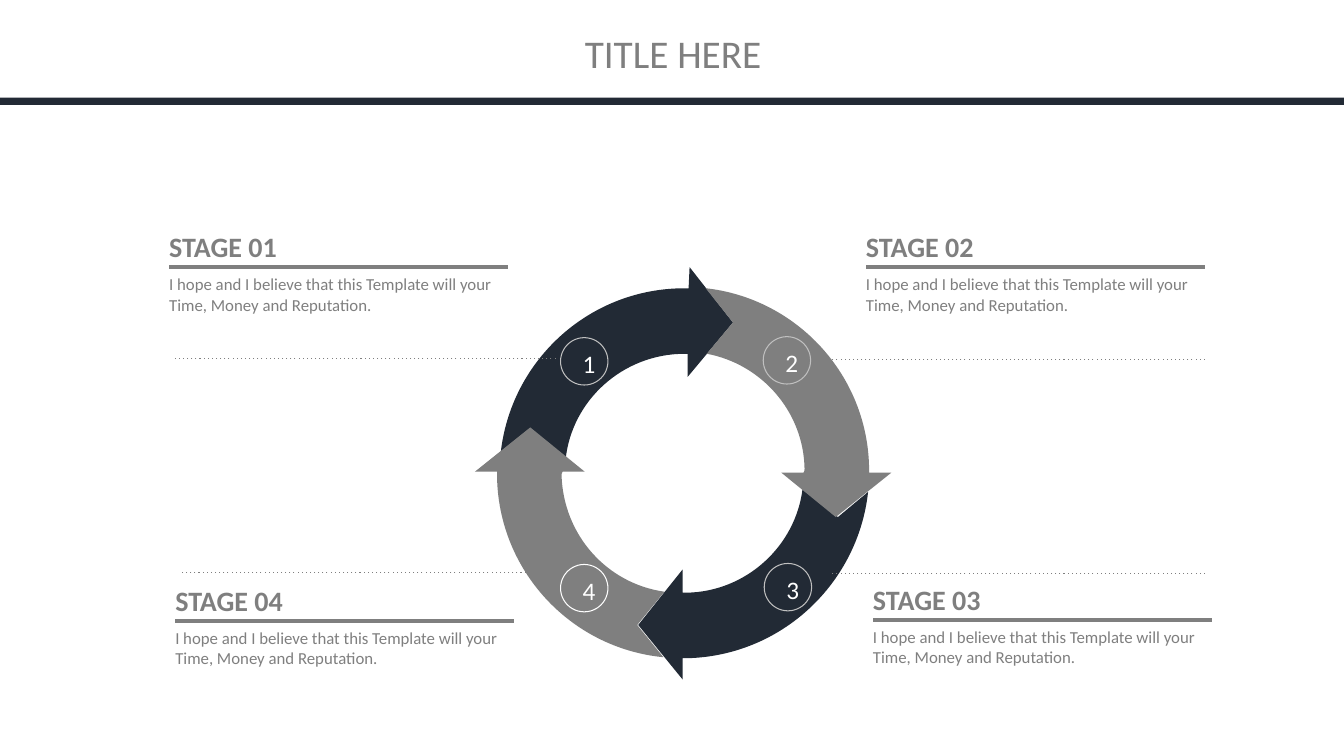
from lxml import etree
from pptx import Presentation
from pptx.dml.color import RGBColor
from pptx.enum import dml, shapes, text
from pptx.oxml.ns import qn
from pptx.util import Inches, Pt

NAVY, GRAY, SILVER, WHITE = "222A35", "7F7F7F", "C0C0C0", "FFFFFF"
BODY = "I hope and I believe that this Template will your Time, Money and Reputation."


def write(sp, words, size, color, bold=False, align=text.PP_ALIGN.LEFT):
    tf = sp.text_frame
    tf.word_wrap = True
    p = tf.paragraphs[0]
    p.alignment = align
    r = p.add_run()
    r.text = words
    r.font.name, r.font.size, r.font.bold = "Calibri", Pt(size), bold
    r.font.color.rgb = RGBColor.from_string(color)


def add_line(x1, x2, y, width):
    line = s.shapes.add_connector(shapes.MSO_CONNECTOR.STRAIGHT,
                                  Inches(x1), Inches(y), Inches(x2), Inches(y))
    line.line.color.rgb = RGBColor.from_string(GRAY)
    line.line.width = Pt(width)
    etree.SubElement(line._element.spPr, qn("a:effectLst"))
    return line


prs = Presentation()
prs.slide_width, prs.slide_height = Inches(13.33), Inches(7.5)
s = prs.slides.add_slide(prs.slide_layouts[5])

# Header
bar = s.shapes.add_shape(shapes.MSO_SHAPE.RECTANGLE, 0, Inches(0.97), prs.slide_width, Inches(0.07))
bar.shadow.inherit = False
bar.fill.solid()
bar.fill.fore_color.rgb = RGBColor.from_string(NAVY)
bar.line.fill.background()

title = s.shapes.title
title.left, title.top, title.width, title.height = Inches(4.85), Inches(0.29), Inches(3.65), Inches(0.47)
tf = title.text_frame
tf.margin_left = tf.margin_right = tf.margin_top = tf.margin_bottom = 0
tf.vertical_anchor = text.MSO_ANCHOR.MIDDLE
write(title, "TITLE HERE", 28, GRAY, align=text.PP_ALIGN.CENTER)

# Stage headings, rules and descriptions: label, rule left, rule y
for label, x, y in [("STAGE 01", 1.68, 2.65), ("STAGE 04", 1.74, 6.16),
                    ("STAGE 03", 8.66, 6.15), ("STAGE 02", 8.59, 2.65)]:
    body = s.shapes.add_textbox(Inches(x - 0.1), Inches(y + 0.02), Inches(3.54), Inches(0.5))
    write(body, BODY, 12, GRAY)
    add_line(x, x + 3.36, y, 3)
    heading = s.shapes.add_textbox(Inches(x - 0.1), Inches(y - 0.42), Inches(2.32), Inches(0.44))
    write(heading, label, 20, GRAY, bold=True)

# Cycle arrows: two numbers are a corner, six are a Bezier curve
arrows = [
    (NAVY, [(6.84, 2.65), (7.27, 3.2), (6.82, 3.74), (6.82, 3.51),
            (6.81, 3.51, 6.8, 3.51, 6.79, 3.51), (6.18, 3.51, 5.67, 3.97, 5.61, 4.56),
            (4.96, 4.56), (5.03, 3.61, 5.82, 2.86, 6.79, 2.86), (6.83, 2.86)]),
    (GRAY, [(5.26, 4.24), (5.8, 4.68), (5.58, 4.68), (5.57, 4.69, 5.57, 4.71, 5.57, 4.72),
            (5.59, 5.31, 6.02, 5.79, 6.59, 5.87), (6.32, 6.2), (6.58, 6.52),
            (5.66, 6.43, 4.94, 5.66, 4.93, 4.72), (4.93, 4.68), (4.71, 4.68)]),
    (NAVY, [(7.96, 4.85), (8.31, 5.13), (8.61, 4.88), (8.51, 5.79, 7.75, 6.51, 6.81, 6.53),
            (6.77, 6.53), (6.77, 6.74), (6.33, 6.2), (6.77, 5.65), (6.77, 5.88),
            (6.78, 5.88, 6.79, 5.88, 6.81, 5.88), (7.4, 5.87, 7.89, 5.42, 7.96, 4.85)]),
    (GRAY, [(7, 2.86), (7.9, 2.96, 8.61, 3.72, 8.62, 4.65), (8.62, 4.69), (8.84, 4.69),
            (8.29, 5.13), (7.75, 4.69), (7.97, 4.69), (7.98, 4.68, 7.98, 4.66, 7.98, 4.65),
            (7.97, 4.08, 7.55, 3.61, 7.01, 3.51), (7.27, 3.2)]),
]
for color, outline in arrows:
    corners = [(Inches(part[-2]), Inches(part[-1])) for part in outline]
    builder = s.shapes.build_freeform(*corners[0])
    builder.add_line_segments(corners[1:], close=True)
    arrow = builder.convert_to_shape()
    arrow.shadow.inherit = False
    arrow.fill.solid()
    arrow.fill.fore_color.rgb = RGBColor.from_string(color)
    arrow.line.fill.background()
    # Turn the straight segments that should bend into curves
    segments = list(arrow._element.iter(qn("a:lnTo")))
    for segment, part in zip(segments, outline[1:]):
        if len(part) == 6:
            curve = etree.Element(qn("a:cubicBezTo"))
            for x, y in zip(part[::2], part[1::2]):
                etree.SubElement(curve, qn("a:pt"), x=str(Inches(x) - arrow.left),
                                 y=str(Inches(y) - arrow.top))
            segment.getparent().replace(segment, curve)

# Numbered circles
for number, x, y, color in [("3", 7.58, 5.59, SILVER), ("2", 7.57, 3.34, SILVER),
                            ("4", 5.56, 5.6, WHITE), ("1", 5.56, 3.35, SILVER)]:
    circle = s.shapes.add_shape(shapes.MSO_SHAPE.OVAL, Inches(x), Inches(y), Inches(0.47), Inches(0.47))
    circle.shadow.inherit = False
    circle.fill.background()
    circle.line.color.rgb = RGBColor.from_string(color)
    circle.line.width = Pt(0.75)
    digit = s.shapes.add_textbox(Inches(x + 0.12), Inches(y + 0.06), Inches(0.22), Inches(0.4))
    write(digit, number, 18, WHITE, align=text.PP_ALIGN.CENTER)

# Dotted leaders
for x1, x2, y in [(5.51, 1.74, 3.56), (5.5, 1.8, 5.68), (11.95, 8.18, 3.57), (11.95, 8.24, 5.69)]:
    leader = add_line(x1, x2, y, 0.75)
    leader.line.dash_style = dml.MSO_LINE.ROUND_DOT
    next(leader._element.iter(qn("a:prstDash"))).set("val", "dot")

prs.save("out.pptx")
